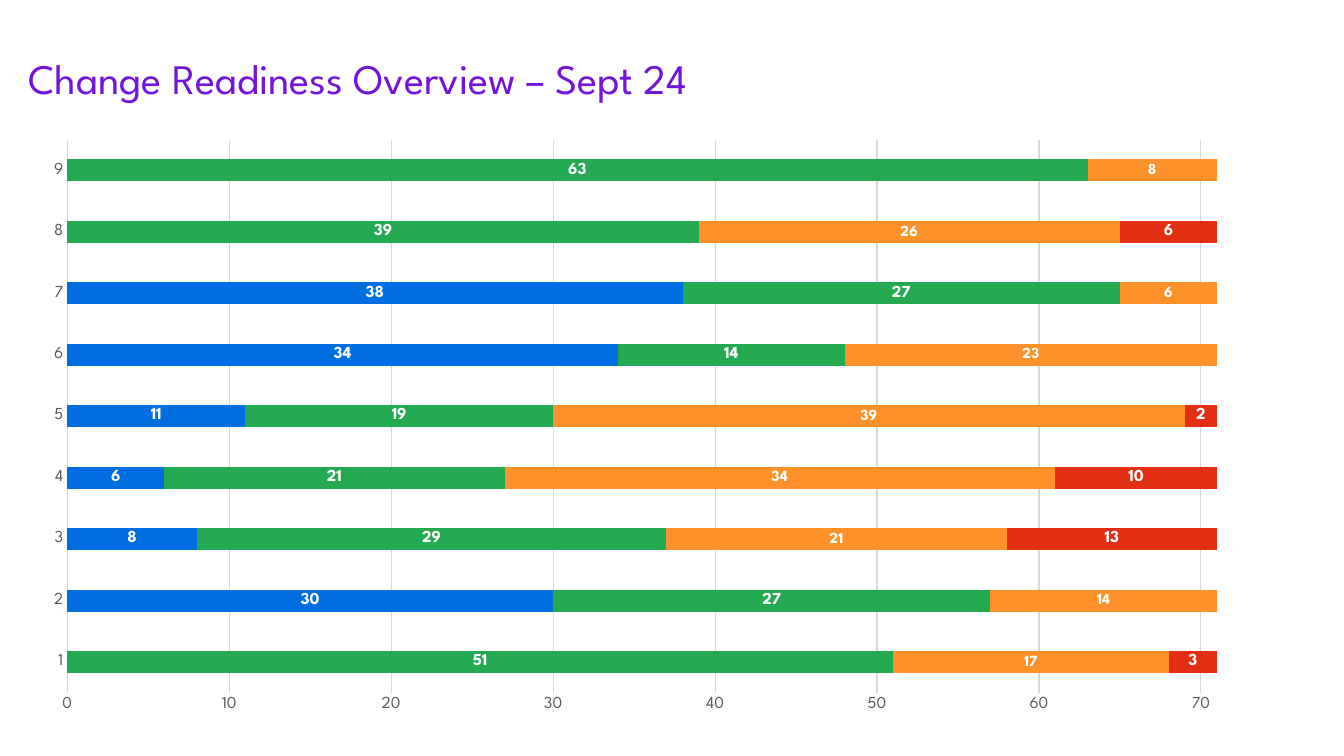
from pptx import Presentation
from pptx.chart.data import CategoryChartData
from pptx.dml.color import RGBColor
from pptx.enum.chart import XL_CHART_TYPE, XL_LABEL_POSITION, XL_TICK_MARK
from pptx.oxml import parse_xml
from pptx.oxml.ns import nsdecls, qn
from pptx.util import Emu, Pt

PX = 9525
PURPLE = RGBColor(0x74, 0x13, 0xDC)
BLUE = RGBColor(0x00, 0x6E, 0xE0)
GREEN = RGBColor(0x23, 0xA9, 0x50)
ORANGE = RGBColor(0xFF, 0x91, 0x2A)
RED = RGBColor(0xE2, 0x2E, 0x12)
GRAY = RGBColor(0x59, 0x59, 0x59)
RULE = RGBColor(0xD9, 0xD9, 0xD9)
WHITE = RGBColor(0xFF, 0xFF, 0xFF)

CATEGORIES = [str(n) for n in range(1, 10)]
SERIES = [
    ("Series 1", BLUE, 12, (0, 30, 8, 6, 11, 34, 38, 0, 0)),
    ("Series 2", GREEN, 12, (51, 27, 29, 21, 19, 14, 27, 39, 63)),
    ("Series 3", ORANGE, 11, (17, 14, 21, 34, 39, 23, 6, 26, 8)),
    ("Series 4", RED, 12, (3, 0, 13, 10, 2, 0, 0, 6, 0)),
]


def px(*lengths):
    return [Emu(n * PX) for n in lengths]


def style_font(font, size, color, bold=False, name="League Spartan"):
    font.name = name
    font.size = Pt(size)
    font.bold = bold
    font.color.rgb = color


def add_text(tf, text, **fmt):
    r = tf.paragraphs[0].add_run()
    r.text = text
    style_font(r.font, **fmt)


def style_rule(line):
    line.color.rgb = RULE
    line.width = Pt(0.75)


class Deck:
    def __init__(self, width, height):
        self.prs = Presentation()
        self.prs.slide_width, self.prs.slide_height = px(width, height)
        self.s = self.prs.slides.add_slide(self.prs.slide_layouts[6])

    def text(self, box, text, **fmt):
        tf = self.s.shapes.add_textbox(*px(*box)).text_frame
        tf.word_wrap = True
        tf.margin_left = tf.margin_top = tf.margin_right = tf.margin_bottom = 0
        add_text(tf, text, **fmt)

    def stacked_bars(self, box, plot_box, categories, series, maximum):
        data = CategoryChartData()
        data.categories = categories
        for name, _, _, values in series:
            data.add_series(name, values)
        chart = self.s.shapes.add_chart(
            XL_CHART_TYPE.BAR_STACKED, *px(*box), data).chart
        chart.has_title = chart.has_legend = False
        style_font(chart.font, 12, GRAY)
        plot = chart.plots[0]
        plot.vary_by_categories = False
        plot.gap_width, plot.overlap = 182, 100
        for ser, (_, color, size, _) in zip(plot.series, series):
            ser.format.fill.solid()
            ser.format.fill.fore_color.rgb = color
            labels = ser.data_labels
            labels.show_value = True
            labels.position = XL_LABEL_POSITION.CENTER
            labels.number_format = "0;;;"
            labels.number_format_is_linked = False
            style_font(labels.font, size, WHITE, bold=True)
        self.axes(chart, maximum)
        self.place_plot(chart, box, plot_box)

    def axes(self, chart, maximum):
        cat, val = chart.category_axis, chart.value_axis
        for axis in (cat, val):
            axis.major_tick_mark = axis.minor_tick_mark = XL_TICK_MARK.NONE
            style_font(axis.tick_labels.font, 12, GRAY)
        cat.has_major_gridlines = False
        style_rule(cat.format.line)
        val.minimum_scale, val.maximum_scale, val.major_unit = 0, maximum, 10
        val.format.line.fill.background()
        val.has_major_gridlines = True
        style_rule(val.major_gridlines.format.line)

    def place_plot(self, chart, box, plot_box):
        left, top, width, height = box
        x, y, w, h = plot_box
        sizes = {"x": (x - left) / width, "y": (y - top) / height,
                 "w": w / width, "h": h / height}
        modes = "".join(f'<c:{k}Mode val="edge"/>' for k in "xy")
        spans = "".join(f'<c:{k} val="{v:.4f}"/>' for k, v in sizes.items())
        area = chart.element.find(".//" + qn("c:plotArea"))
        for old in area.findall(qn("c:layout")):
            area.remove(old)
        area.insert(0, parse_xml(
            f'<c:layout {nsdecls("c")}><c:manualLayout>'
            f'<c:layoutTarget val="inner"/>{modes}{spans}'
            '</c:manualLayout></c:layout>'))


def main():
    deck = Deck(1280, 720)
    deck.text((27, 50, 749, 48), "Change Readiness Overview – Sept 24",
              size=30, color=PURPLE)
    deck.stacked_bars((27, 122, 1219, 569), (64, 133, 1157, 527),
                      CATEGORIES, SERIES, maximum=75)
    deck.prs.save("out.pptx")


if __name__ == "__main__":
    main()
